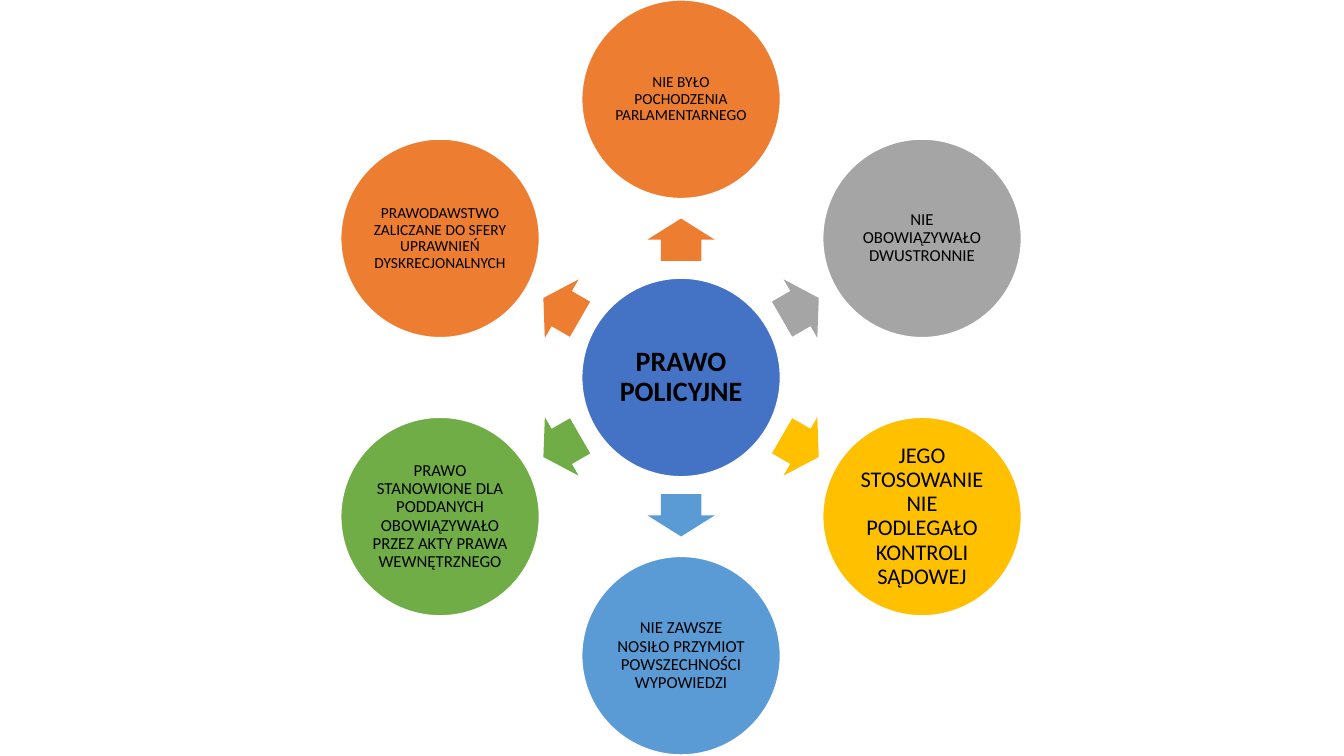
"""Build a radial diagram: a central topic with six features around it."""
from math import cos, radians, sin

from pptx import Presentation
from pptx.dml.color import RGBColor
from pptx.enum.shapes import MSO_SHAPE
from pptx.enum.text import MSO_ANCHOR, PP_ALIGN
from pptx.util import Inches, Pt

OVAL = MSO_SHAPE.OVAL
ARROW = MSO_SHAPE.RIGHT_ARROW
MIDDLE = MSO_ANCHOR.MIDDLE
CENTER = PP_ALIGN.CENTER

COLORS = {
    "blue": "4472C4", "orange": "ED7D31", "gray": "A5A5A5", "gold": "FFC000",
    "sky": "5B9BD5", "green": "70AD47", "white": "FFFFFF", "black": "000000",
}
ROWS = 75
CENTER_COL, CENTER_ROW = 67.55, 37.45
CIRCLE = 19.7
CIRCLE_ORBIT, ARROW_ORBIT = 27.6, 13.67
ARROW_LENGTH, ARROW_WIDTH = 4.2, 6.7

FEATURES = [
    ("NIE BYŁO POCHODZENIA PARLAMENTARNEGO", "orange", 11),
    ("NIE OBOWIĄZYWAŁO DWUSTRONNIE", "gray", 12),
    ("JEGO STOSOWANIE NIE PODLEGAŁO KONTROLI SĄDOWEJ", "gold", 16),
    ("NIE ZAWSZE NOSIŁO PRZYMIOT POWSZECHNOŚCI WYPOWIEDZI", "sky", 12),
    ("PRAWO STANOWIONE DLA PODDANYCH OBOWIĄZYWAŁO PRZEZ AKTY PRAWA "
     "WEWNĘTRZNEGO", "green", 12),
    ("PRAWODAWSTWO ZALICZANE DO SFERY UPRAWNIEŃ DYSKRECJONALNYCH",
     "orange", 11),
]


def apply(target, values):
    """Set each attribute in values on target."""
    for name, value in values.items():
        setattr(target, name, value)


class RadialSlide:
    """Draw circles and arrows around the centre of a slide."""

    def __init__(self, prs):
        """Add a blank slide and derive the grid cell from its height."""
        self.s = prs.slides.add_slide(prs.slide_layouts[6])
        self.cell = prs.slide_height / ROWS
        self.font = "Calibri"

    def color(self, name):
        """Return the named colour."""
        return RGBColor.from_string(COLORS[name])

    def shape(self, kind, angle, orbit, width, height, fill):
        """Add a filled shape centred on an orbit at the given angle."""
        col = CENTER_COL + orbit * cos(radians(angle)) - width / 2
        row = CENTER_ROW + orbit * sin(radians(angle)) - height / 2
        box = [round(v * self.cell) for v in (col, row, width, height)]
        sp = self.s.shapes.add_shape(kind, *box)
        sp.shadow.inherit = False
        sp.fill.solid()
        sp.fill.fore_color.rgb = self.color(fill)
        return sp

    def circle(self, text, fill, size, angle=0, orbit=0, bold=False, inset=0.02):
        """Add a circle with centred text."""
        sp = self.shape(OVAL, angle, orbit, CIRCLE, CIRCLE, fill)
        sp.line.color.rgb = self.color("white")
        sp.line.width = Pt(1)
        tf = sp.text_frame
        margins = ("margin_left", "margin_top", "margin_right", "margin_bottom")
        apply(tf, dict.fromkeys(margins, Inches(inset)))
        apply(tf, {"word_wrap": True, "vertical_anchor": MIDDLE})
        p = tf.paragraphs[0]
        apply(p, {"alignment": CENTER, "line_spacing": 0.9})
        r = p.add_run()
        r.text = text
        apply(r.font, {"name": self.font, "size": Pt(size), "bold": bold})
        r.font.color.rgb = self.color("black")

    def arrow(self, fill, angle):
        """Add an arrow pointing away from the centre."""
        sp = self.shape(ARROW, angle, ARROW_ORBIT, ARROW_LENGTH, ARROW_WIDTH, fill)
        sp.line.fill.background()
        sp.adjustments[0] = 0.6
        sp.adjustments[1] = 0.5
        sp.rotation = angle % 360


def main():
    """Build and save the presentation."""
    prs = Presentation()
    prs.slide_width, prs.slide_height = Inches(13.33), Inches(7.5)
    diagram = RadialSlide(prs)
    diagram.circle("PRAWO POLICYJNE", "blue", 20, bold=True, inset=0.03)
    for i, (text, fill, size) in enumerate(FEATURES):
        angle = i * 360 / len(FEATURES) - 90
        diagram.arrow(fill, angle)
        diagram.circle(text, fill, size, angle, CIRCLE_ORBIT)
    prs.save("out.pptx")


if __name__ == "__main__":
    main()
